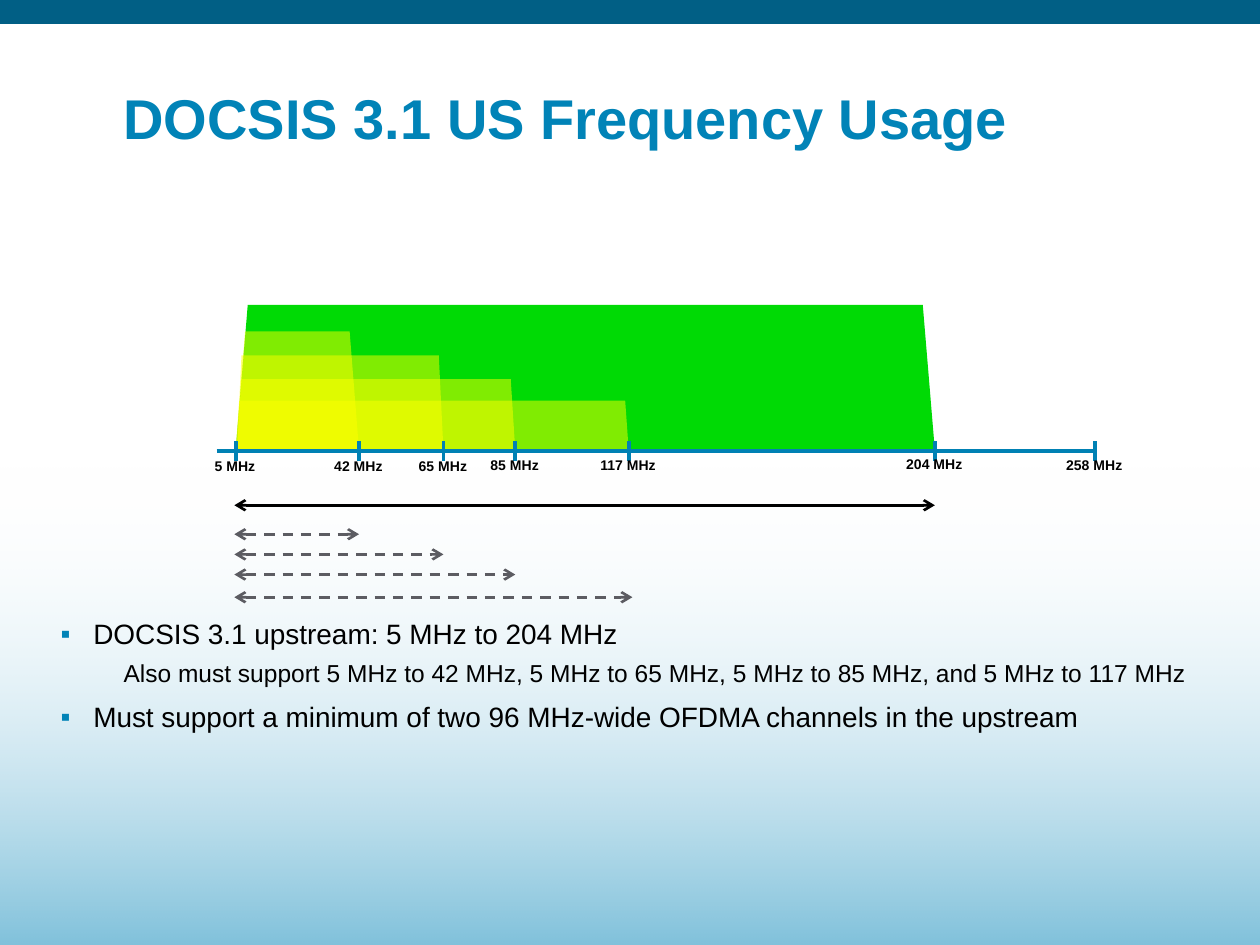
from dataclasses import dataclass

from lxml import etree
from pptx import Presentation
from pptx.dml.color import RGBColor
from pptx.enum.dml import MSO_LINE
from pptx.enum.shapes import MSO_CONNECTOR, MSO_SHAPE
from pptx.enum.text import MSO_ANCHOR, MSO_AUTO_SIZE, PP_ALIGN
from pptx.oxml.ns import qn
from pptx.util import Inches, Pt

RECTANGLE, TRAPEZOID = MSO_SHAPE.RECTANGLE, MSO_SHAPE.TRAPEZOID
STRAIGHT, DASH = MSO_CONNECTOR.STRAIGHT, MSO_LINE.DASH
LEFT, CENTER = PP_ALIGN.LEFT, PP_ALIGN.CENTER
TOP, BOTTOM = MSO_ANCHOR.TOP, MSO_ANCHOR.BOTTOM
TITLE_ONLY = 5


@dataclass(frozen=True)
class Theme:
    font: str = "Arial"
    band: str = "015F85"
    accent: str = "0183B7"
    axis: str = "0081B4"
    white: str = "FFFFFF"
    black: str = "000000"
    grey: str = "5C5C62"
    green: str = "00DA05"
    yellow: str = "FFFF00"
    title_size: float = 32
    bullet_size: float = 16
    detail_size: float = 14
    label_size: float = 8


@dataclass(frozen=True)
class Box:
    """A region in inches."""
    left: float
    top: float
    width: float
    height: float

    def inches(self):
        return [Inches(v) for v in (self.left, self.top, self.width, self.height)]


THEME = Theme()

# Label, offset along the axis, label offset below the axis
TICKS = [("5 MHz", 0.15, 0.02), ("42 MHz", 1.13, 0.02), ("65 MHz", 1.8, 0.02),
         ("85 MHz", 2.37, 0.01), ("117 MHz", 3.27, 0.01), ("204 MHz", 5.7, 0),
         ("258 MHz", 6.97, 0.01)]
# Left edge, right edge, top, slant, arrow offset from the region's top, arrow end
FULL_BAND = (0.15, 5.7, 0, 0.083, 1.59, 5.7)
SUB_BANDS = [(0.15, 1.13, 0.21, 0.079, 1.82, 1.13),
             (0.16, 1.8, 0.4, 0.049, 1.98, 1.8),
             (0.16, 2.37, 0.59, 0.063, 2.14, 2.37),
             (0.15, 3.27, 0.76, 0.07, 2.32, 3.3)]
BULLETS = [(0, "DOCSIS 3.1 upstream: 5 MHz to 204 MHz", 0),
           (1, "Also must support 5 MHz to 42 MHz, 5 MHz to 65 MHz, "
               "5 MHz to 85 MHz, and 5 MHz to 117 MHz", 5.5),
           (0, "Must support a minimum of two 96 MHz-wide OFDMA channels in the upstream", 8)]


def rgb(color):
    return RGBColor.from_string(color)


def set_alpha(color_parent, percent):
    for color in color_parent.iter(qn("a:srgbClr")):
        etree.SubElement(color, qn("a:alpha")).set("val", str(percent * 1000))


def add_filled(page, kind, box, color, alpha=None):
    shape = page.shapes.add_shape(kind, *box.inches())
    shape.shadow.inherit = False
    shape.line.fill.background()
    shape.fill.solid()
    shape.fill.fore_color.rgb = rgb(color)
    if alpha is not None:
        set_alpha(shape.fill._xPr.find(qn("a:solidFill")), alpha)
    return shape


def add_line(page, start, end, color, width, dash=None, arrows=False):
    line = page.shapes.add_connector(STRAIGHT, *[Inches(v) for v in start + end])
    line.line.color.rgb = rgb(color)
    line.line.width = Pt(width)
    if dash:
        line.line.dash_style = dash
    if arrows:
        outline = line.line._get_or_add_ln()
        for name in ("a:headEnd", "a:tailEnd"):
            etree.SubElement(outline, qn(name)).set("type", "arrow")
    etree.SubElement(line._element.spPr, qn("a:effectLst"))


def set_frame(frame, anchor, wrap=True, insets=(0.09, 0.04)):
    frame.word_wrap = wrap
    frame.auto_size = MSO_AUTO_SIZE.NONE
    frame.vertical_anchor = anchor
    frame.margin_left = frame.margin_right = Inches(insets[0])
    frame.margin_top = frame.margin_bottom = Inches(insets[1])


def add_span(para, text, size, color, bold=False, align=LEFT, spacing=0.9):
    para.alignment = align
    para.line_spacing = spacing
    span = para.add_run()
    span.text = text
    span.font.name = THEME.font
    span.font.size = Pt(size)
    span.font.bold = bold
    span.font.color.rgb = rgb(color)


def add_label(page, box, text):
    frame = page.shapes.add_textbox(*box.inches()).text_frame
    set_frame(frame, TOP, False, (0.1, 0.05))
    add_span(frame.paragraphs[0], text, THEME.label_size, THEME.black, True, CENTER)


def add_backdrop(page, box):
    add_filled(page, RECTANGLE, Box(box.left, box.top, box.width, 0.19), THEME.band)
    fade_top = 3.68
    fade = add_filled(page, RECTANGLE, Box(box.left, box.top + fade_top, box.width,
                                           box.height - fade_top), THEME.white)
    fade.fill.gradient()
    fade.fill.gradient_angle = 270
    stops = [(THEME.white, 0), (THEME.accent, 50)]
    for stop, (color, alpha) in zip(fade.fill.gradient_stops, stops):
        stop.color.rgb = rgb(color)
        set_alpha(stop._gs, alpha)


def add_title(page, box):
    title = page.shapes.title
    title.left, title.top, title.width, title.height = box.inches()
    set_frame(title.text_frame, BOTTOM)
    add_span(title.text_frame.paragraphs[0], "DOCSIS 3.1 US Frequency Usage",
             THEME.title_size, THEME.accent, True)


def add_spectrum(page, box):
    axis = box.top + 1.16
    arrow_start = box.left + 0.14

    def add_band(band, color, alpha, line_color, dash):
        left, right, top, slant, arrow, arrow_end = band
        area = Box(box.left + left, box.top + top, right - left, axis - box.top - top)
        add_filled(page, TRAPEZOID, area, color, alpha).adjustments[0] = slant
        height = box.top + arrow
        add_line(page, (arrow_start, height), (box.left + arrow_end, height),
                 line_color, 1.5, dash, True)

    add_band(FULL_BAND, THEME.green, None, THEME.black, None)
    for band in SUB_BANDS:
        add_band(band, THEME.yellow, 50, THEME.grey, DASH)

    add_line(page, (box.left, axis), (box.left + box.width, axis), THEME.axis, 2.25)
    for text, offset, drop in TICKS:
        center = box.left + offset
        add_line(page, (center, axis - 0.08), (center, axis + 0.08), THEME.axis, 2.25)
        add_label(page, Box(center - 0.33, axis + drop, 0.65, 0.22), text)


def add_bullets(page, box):
    frame = page.shapes.add_textbox(*box.inches()).text_frame
    set_frame(frame, TOP)
    for index, (level, text, gap) in enumerate(BULLETS):
        para = frame.add_paragraph() if index else frame.paragraphs[0]
        para.level = level
        size = THEME.detail_size if level else THEME.bullet_size
        add_span(para, text, size, THEME.black, spacing=0.95)
        para.space_before = Pt(gap)
        margin, indent = (0.63, -0.13) if level else (0.26, -0.26)
        props = para._p.get_or_add_pPr()
        props.set("marL", str(Inches(margin)))
        props.set("indent", str(Inches(indent)))
        if level:
            etree.SubElement(props, qn("a:buNone"))
        else:
            mark = etree.SubElement(props, qn("a:buClr"))
            etree.SubElement(mark, qn("a:srgbClr")).set("val", THEME.accent)
            etree.SubElement(props, qn("a:buFont")).set("typeface", THEME.font)
            etree.SubElement(props, qn("a:buChar")).set("char", "▪")


def main():
    deck = Presentation()
    deck.slide_width, deck.slide_height = Inches(10), Inches(7.5)
    page = deck.slides.add_slide(deck.slide_layouts[TITLE_ONLY])
    add_backdrop(page, Box(0, 0, 10, 7.5))
    add_title(page, Box(0.89, 0.32, 8.5, 0.92))
    add_spectrum(page, Box(1.72, 2.42, 6.98, 2.32))
    add_bullets(page, Box(0.39, 4.87, 9.25, 2.15))
    deck.save("out.pptx")


if __name__ == "__main__":
    main()
